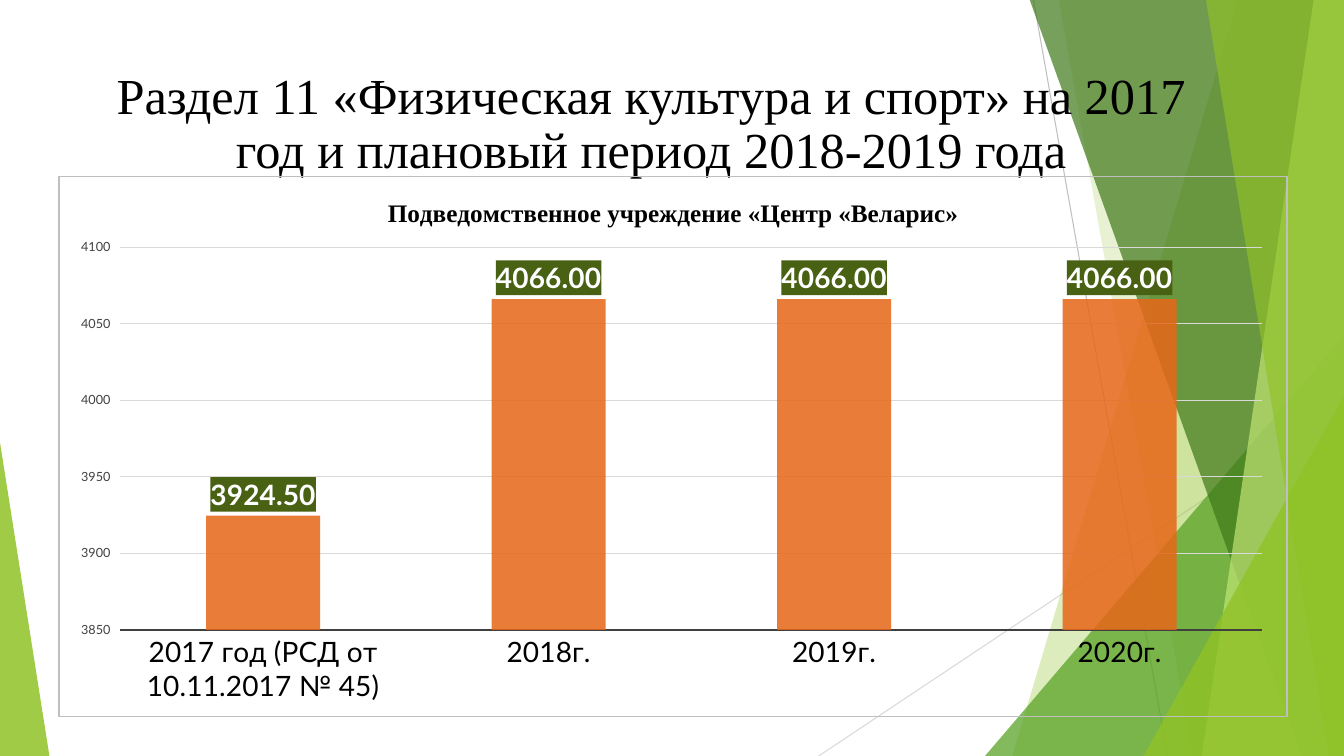
from lxml import etree
from pptx import Presentation
from pptx import util as u
from pptx.chart import data as chart_data
from pptx.dml.color import RGBColor
from pptx.enum import chart as chart_enum
from pptx.enum import shapes, text
from pptx.oxml import parse_xml
from pptx.oxml.ns import nsdecls, qn

BLACK = RGBColor(0x00, 0x00, 0x00)
WHITE = RGBColor(0xFF, 0xFF, 0xFF)
DARK_GREY = RGBColor(0x40, 0x40, 0x40)
MID_GREY = RGBColor(0xBF, 0xBF, 0xBF)
LIGHT_GREY = RGBColor(0xD9, 0xD9, 0xD9)
LIME = RGBColor(0x90, 0xC2, 0x26)
PALE_LIME = RGBColor(0xC0, 0xE4, 0x74)
GREEN = RGBColor(0x54, 0xA0, 0x21)
DEEP_GREEN = RGBColor(0x3F, 0x78, 0x19)
LABEL_GREEN = RGBColor(0x48, 0x61, 0x13)
ORANGE = RGBColor(0xE7, 0x66, 0x18)


def paint(fill, color, opacity):
    fill.solid()
    fill.fore_color.rgb = color
    color_element = fill._xPr.find(qn("a:solidFill"))[0]
    etree.SubElement(color_element, qn("a:alpha"), val=str(opacity * 1000))


def set_attributes(target, values):
    for name, value in values.items():
        if name == "color":
            target.color.rgb = value
        else:
            setattr(target, name, value)


presentation = Presentation()
presentation.slide_width = u.Inches(13.33)
presentation.slide_height = u.Inches(7.5)
slide = presentation.slides.add_slide(presentation.slide_layouts[6])

rays = [
    (10.25, 0, 11.58, 7.5, MID_GREY),
    (13.33, 4.03, 8.12, 7.5, LIGHT_GREY),
]
for *ends, color in rays:
    ray = slide.shapes.add_connector(
        shapes.MSO_CONNECTOR.STRAIGHT, *[u.Inches(value) for value in ends]
    )
    set_attributes(ray.line, {"color": color, "width": u.Pt(0.75)})
    etree.SubElement(ray._element.spPr, qn("a:effectLst"))

facets = [
    ("band", 12.28, 10.04, LIME, 30),
    ("band", 10.5, 11.83, LIME, 20),
    ("triangle", 9.77, 3.33, 3.56, 1, GREEN, 72),
    ("band", 10.21, 12.91, DEEP_GREEN, 70),
    ("band", 13.03, 11.92, PALE_LIME, 70),
    ("band", 11.96, 13.18, LIME, 65),
    ("triangle", 11.34, 3.93, 1.99, 1, LIME, 80),
    ("triangle", 0, 4.39, 0.49, 0, LIME, 85),
]
for kind, *geometry, color, opacity in facets:
    if kind == "band":
        top_x, bottom_x = geometry
        outline = [(top_x, -0.01), (13.33, -0.01), (13.33, 7.5), (bottom_x, 7.5)]
        points = [(u.Inches(x), u.Inches(y)) for x, y in outline]
        builder = slide.shapes.build_freeform(*points[0])
        builder.add_line_segments(points[1:], close=True)
        facet = builder.convert_to_shape()
    else:
        left, top, width, apex = geometry
        facet = slide.shapes.add_shape(
            shapes.MSO_SHAPE.ISOSCELES_TRIANGLE,
            u.Inches(left), u.Inches(top), u.Inches(width), u.Inches(7.5 - top),
        )
        facet.adjustments[0] = apex
    facet.shadow.inherit = False
    facet.line.fill.background()
    paint(facet.fill, color, opacity)

title_box = slide.shapes.add_textbox(
    u.Inches(1.04), u.Inches(0.46), u.Inches(10.84), u.Inches(1.57)
)
set_attributes(
    title_box.text_frame,
    {"word_wrap": True, "vertical_anchor": text.MSO_ANCHOR.MIDDLE},
)
paragraph = title_box.text_frame.paragraphs[0]
paragraph.text = (
    "Раздел 11 «Физическая культура и спорт» на 2017 год "
    "и плановый период 2018-2019 года"
)
set_attributes(paragraph, {"alignment": text.PP_ALIGN.CENTER, "line_spacing": 0.9})
set_attributes(
    paragraph.runs[0].font,
    {"name": "Times New Roman", "size": u.Pt(36), "color": BLACK},
)

budget = chart_data.CategoryChartData(number_format="0.00")
budget.categories = ["2017 год (РСД от 10.11.2017 № 45)", "2018г.", "2019г.", "2020г."]
budget.add_series("Series 1", [3924.5, 4066, 4066, 4066])
chart = slide.shapes.add_chart(
    chart_enum.XL_CHART_TYPE.COLUMN_CLUSTERED,
    u.Inches(0.58), u.Inches(1.75), u.Inches(12.19), u.Inches(5.36), budget,
).chart
chart.has_legend = False
chart.has_title = True
chart_title = chart.chart_title.text_frame.paragraphs[0]
chart_title.text = "Подведомственное учреждение «Центр «Веларис»"

plot = chart.plots[0]
set_attributes(plot, {"gap_width": 150, "vary_by_categories": False, "has_data_labels": True})
paint(plot.series[0].format.fill, ORANGE, 85)
labels = plot.data_labels
set_attributes(
    labels,
    {
        "show_value": True,
        "number_format": "0.00",
        "number_format_is_linked": False,
        "position": chart_enum.XL_LABEL_POSITION.OUTSIDE_END,
    },
)

category_axis = chart.category_axis
category_axis.major_tick_mark = chart_enum.XL_TICK_MARK.NONE
set_attributes(category_axis.format.line, {"color": DARK_GREY, "width": u.Pt(1.5)})
value_axis = chart.value_axis
set_attributes(
    value_axis,
    {"minimum_scale": 3850, "maximum_scale": 4100, "major_unit": 50,
     "major_tick_mark": chart_enum.XL_TICK_MARK.OUTSIDE},
)
set_attributes(
    value_axis.tick_labels,
    {"number_format": "General", "number_format_is_linked": False},
)
value_axis.format.line.fill.background()
set_attributes(
    value_axis.major_gridlines.format.line, {"color": LIGHT_GREY, "width": u.Pt(0.5)}
)

chart_fonts = [
    (chart.font, "Lato", 10, BLACK, False),
    (chart_title.runs[0].font, "Times New Roman", 18, BLACK, True),
    (labels.font, "Lato", 20, WHITE, True),
    (category_axis.tick_labels.font, "Lato", 20, BLACK, False),
    (value_axis.tick_labels.font, "Lato", 9, DARK_GREY, False),
]
for font, name, size, color, bold in chart_fonts:
    set_attributes(font, {"name": name, "size": u.Pt(size), "bold": bold, "color": color})

namespaces = nsdecls("c", "a")
labels._element.find(qn("c:txPr")).addprevious(parse_xml(
    f'<c:spPr {namespaces}><a:solidFill><a:srgbClr val="{LABEL_GREEN}"/>'
    "</a:solidFill></c:spPr>"
))
chart_element = chart._chartSpace.find(qn("c:chart"))
chart_element.addnext(parse_xml(
    f'<c:spPr {namespaces}><a:noFill/><a:ln w="{u.Pt(0.75)}"><a:solidFill>'
    f'<a:srgbClr val="{MID_GREY}"/></a:solidFill></a:ln></c:spPr>'
))
plot_area = chart_element.find(qn("c:plotArea"))
for layout in plot_area.findall(qn("c:layout")):
    plot_area.remove(layout)
plot_area.insert(0, parse_xml(
    f'<c:layout {namespaces}><c:manualLayout><c:layoutTarget val="inner"/>'
    '<c:xMode val="edge"/><c:yMode val="edge"/>'
    '<c:x val="0.05"/><c:y val="0.13"/><c:w val="0.93"/><c:h val="0.71"/>'
    "</c:manualLayout></c:layout>"
))

presentation.save("out.pptx")
